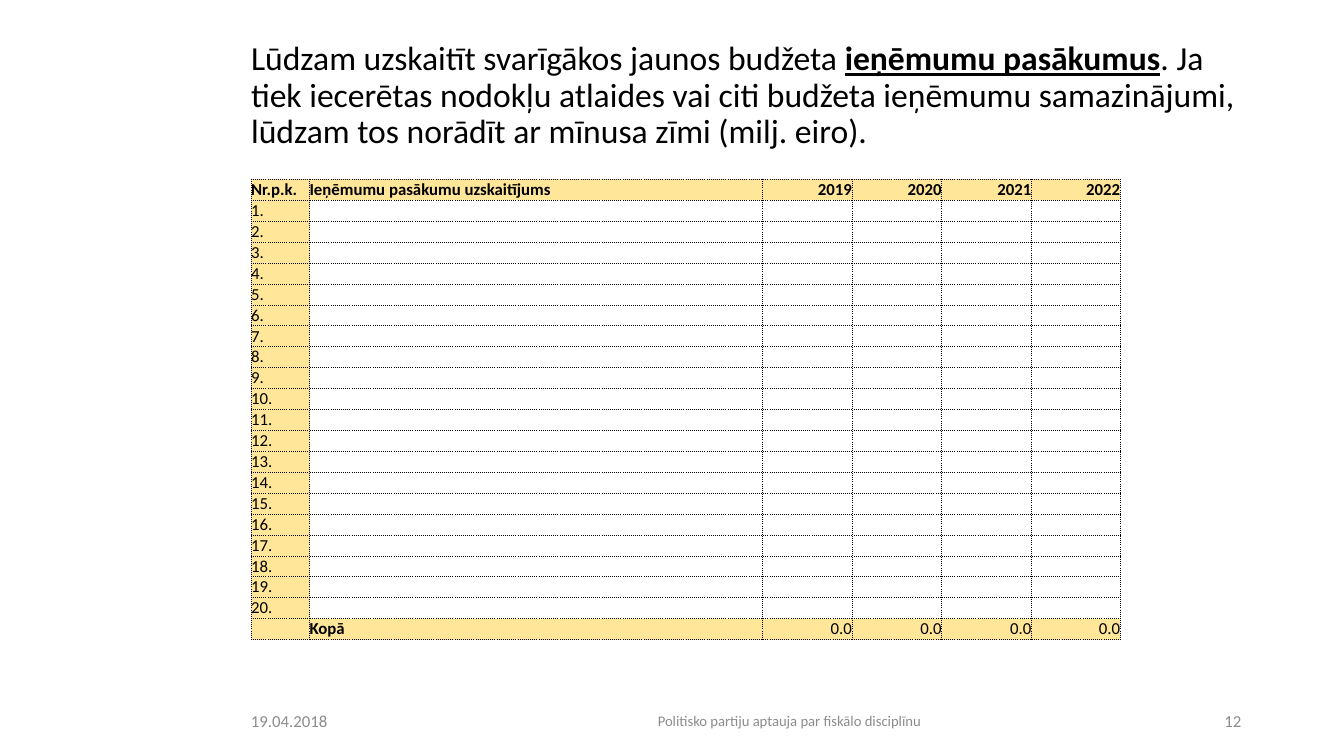
from lxml import etree
from pptx import Presentation
from pptx.dml.color import RGBColor
from pptx.enum.text import MSO_ANCHOR, MSO_AUTO_SIZE, PP_ALIGN
from pptx.oxml.ns import qn
from pptx.util import Inches, Pt

LEFT, CENTER, RIGHT = PP_ALIGN.LEFT, PP_ALIGN.CENTER, PP_ALIGN.RIGHT
MIDDLE, BOTTOM = MSO_ANCHOR.MIDDLE, MSO_ANCHOR.BOTTOM
FIXED = MSO_AUTO_SIZE.NONE
COLORS = {"ink": "000000", "gold": "FFE699", "gray": "8C8C8C"}


def add_run(para, text, size, color="ink", bold=False, under=False):
    run = para.add_run()
    run.text = text
    font = run.font
    font.name = "Calibri"
    font.size = Pt(size)
    font.bold = bold
    font.underline = under
    font.color.rgb = RGBColor.from_string(COLORS[color])


def add_border(cell, side):
    props = cell._tc.get_or_add_tcPr()
    line = etree.SubElement(props, qn("a:" + side), w=str(Pt(0.5)))
    fill = etree.SubElement(line, qn("a:solidFill"))
    etree.SubElement(fill, qn("a:srgbClr"), val=COLORS["ink"])
    etree.SubElement(line, qn("a:prstDash"), val="dot")


prs = Presentation()
prs.slide_width = Inches(13.33)
prs.slide_height = Inches(7.5)
slide = prs.slides.add_slide(prs.slide_layouts[5])

title = slide.shapes.title
title.left, title.top = Inches(2.39), Inches(0.4)
title.width, title.height = Inches(10.02), Inches(1.11)
frame = title.text_frame
frame.word_wrap = True
frame.auto_size = FIXED
frame.vertical_anchor = MIDDLE
para = frame.paragraphs[0]
para.alignment = LEFT
para.line_spacing = 0.9
add_run(para, "Lūdzam uzskaitīt svarīgākos jaunos budžeta ", 24)
add_run(para, "ieņēmumu pasākumus", 24, bold=True, under=True)
add_run(para, ". Ja tiek iecerētas nodokļu atlaides vai citi budžeta ieņēmumu "
        "samazinājumi, lūdzam tos norādīt ar mīnusa zīmi (milj. eiro).", 24)

head = ["Nr.p.k.", "Ieņēmumu pasākumu uzskaitījums", "2019", "2020", "2021", "2022"]
total = ["", "Kopā"] + ["0.0"] * 4
rows = [head] + [[f"{n}."] + [""] * 5 for n in range(1, 21)] + [total]
widths = [0.58, 4.49, 0.89, 0.89, 0.89, 0.88]
last = len(rows) - 1

holder = slide.shapes.add_table(len(rows), len(widths), Inches(2.49), Inches(1.78),
                                Inches(8.63), Inches(4.57))
table = holder.table
table.horz_banding = False
for col, width in zip(table.columns, widths):
    col.width = Inches(width)
for r, row in enumerate(rows):
    table.rows[r].height = Inches(4.57 / len(rows))
    for c, text in enumerate(row):
        cell = table.cell(r, c)
        cell.margin_left = cell.margin_right = 0
        cell.margin_top = cell.margin_bottom = 0
        cell.vertical_anchor = BOTTOM if r == 0 else MIDDLE
        for side in ("lnL", "lnR", "lnT", "lnB"):
            add_border(cell, side)
        if r in (0, last) or c == 0:
            cell.fill.solid()
            cell.fill.fore_color.rgb = RGBColor.from_string(COLORS["gold"])
        else:
            cell.fill.background()
        para = cell.text_frame.paragraphs[0]
        para.alignment = RIGHT if c > 1 else LEFT
        if text:
            add_run(para, text, 12, bold=r == 0 or text == "Kopā")
        else:
            etree.SubElement(para._p, qn("a:endParaRPr"), sz="1200")

feet = [
    (2.39, 1.64, "19.04.2018", 12, LEFT),
    (4.31, 7.04, "Politisko partiju aptauja par fiskālo disciplīnu", 10.5, CENTER),
    (11.62, 0.79, "12", 12, RIGHT),
]
for left, width, text, size, align in feet:
    box = slide.shapes.add_textbox(Inches(left), Inches(6.95), Inches(width), Inches(0.4))
    frame = box.text_frame
    frame.word_wrap = True
    frame.vertical_anchor = MIDDLE
    para = frame.paragraphs[0]
    para.alignment = align
    add_run(para, text, size, "gray")

prs.save("out.pptx")
